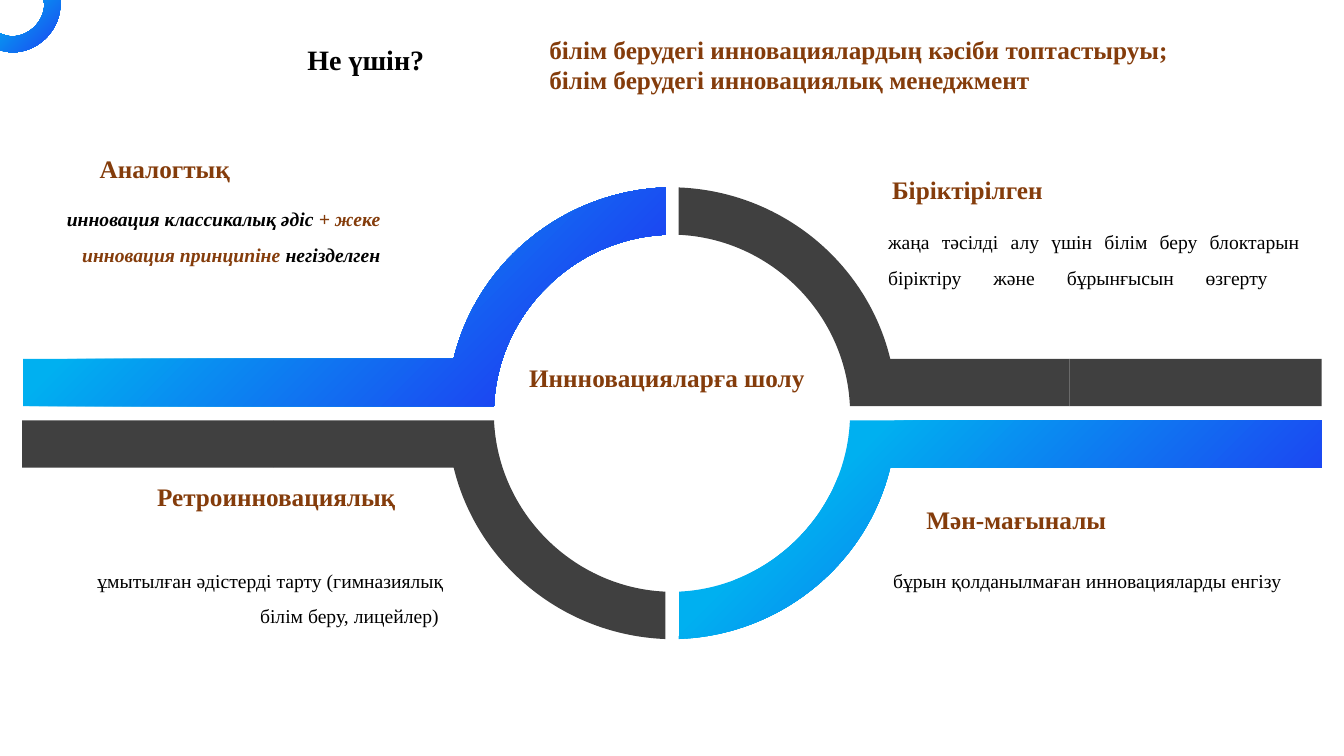
from pptx import Presentation
from pptx.dml.color import RGBColor
from pptx.enum.shapes import MSO_SHAPE as Shape
from pptx.enum.text import MSO_AUTO_SIZE as AutoSize, PP_ALIGN as Align
from pptx.oxml.ns import qn
from pptx.util import Inches, Pt
from lxml import etree

COLORS = {"dark": "404040", "cyan": "00B0F0", "blue": "1C46F2",
          "brown": "843C0B", "black": "000000"}
FONT = "Times New Roman"
CENTER_Y = 4.1
RING_X = {1: 6.73, -1: 6.6}
QUARTER_RING = [(2.1, 0.54), (1.87, 1.49), (1.02, 2.2), (0, 2.24),
                (0, 1.77), (0.91, 1.73), (1.66, 0.99), (1.7, 0.07)]
QUARTER_CURVES = (1, 5)
CORNER_RING = [(0.43, 0), (0.6, 0), (0.6, 0.04),
               (0.6, 0.3), (0.38, 0.52), (0.12, 0.52),
               (0.09, 0.52), (0.05, 0.51), (0, 0.5), (0, 0.33),
               (0.05, 0.35), (0.09, 0.36), (0.12, 0.36),
               (0.29, 0.36), (0.44, 0.21), (0.44, 0.04)]
CORNER_CURVES = (3, 6, 10, 13)
ARM_STOPS = (0.24, 0.81)
TITLE = {"size": Pt(20), "bold": True}
HEADING = {"size": Pt(18), "bold": True}
BODY = {"size": Pt(14)}
EMPHASIS = {"size": Pt(14), "bold": True, "italic": True}


def rgb(color):
    """Return the named colour."""
    return RGBColor.from_string(COLORS[color])


def paint(shape, stops=None):
    """Fill a shape with the dark tone, or with a cyan to blue gradient."""
    shape.shadow.inherit = False
    shape.line.fill.background()
    if stops is None:
        shape.fill.solid()
        shape.fill.fore_color.rgb = rgb("dark")
        return
    shape.fill.gradient()
    shape.fill.gradient_angle = 315
    for stop, position, color in zip(shape.fill.gradient_stops, stops, ("cyan", "blue")):
        stop.position = position
        stop.color.rgb = rgb(color)


def bend(shape, curves):
    """Turn the three segments from each listed point into one Bezier curve."""
    outline = next(shape.element.iter(qn("a:moveTo"))).getparent()
    segments = list(outline)
    for first in curves:
        curve = etree.Element(qn("a:cubicBezTo"))
        segments[first].addprevious(curve)
        for segment in segments[first:first + 3]:
            curve.append(segment[0])
            outline.remove(segment)


def add_outline(slide, points, curves, stops=None):
    """Draw a closed outline in inches with curves at the listed points."""
    corners = [(Inches(x), Inches(y)) for x, y in points]
    builder = slide.shapes.build_freeform(*corners[0])
    builder.add_line_segments(corners[1:], close=True)
    shape = builder.convert_to_shape()
    bend(shape, curves)
    paint(shape, stops)


def add_arm(slide, side, rise, reach, stops=None):
    """Draw a quarter of the ring with its bar, mirrored by side and rise."""
    arm = QUARTER_RING + [(reach, 0.07), (reach, 0.54)]
    points = [(RING_X[side] + side * x, CENTER_Y - rise * y) for x, y in arm]
    add_outline(slide, points, QUARTER_CURVES, stops)


def add_bar_end(slide, left, top, width):
    """Draw the outer piece of a dark bar."""
    paint(slide.shapes.add_shape(Shape.RECTANGLE, Inches(left), Inches(top),
                                 Inches(width), Inches(0.47)))


def add_text(slide, box, paragraphs, style, align=Align.LEFT, spacing=None,
             wrap=True, final_break=False):
    """Write paragraphs, each a list of (text, colour) runs."""
    frame = slide.shapes.add_textbox(*map(Inches, box)).text_frame
    frame.word_wrap = wrap
    frame.auto_size = AutoSize.SHAPE_TO_FIT_TEXT
    for index, runs in enumerate(paragraphs):
        paragraph = frame.add_paragraph() if index else frame.paragraphs[0]
        paragraph.alignment = align
        paragraph.line_spacing = spacing
        for text, color in runs:
            run = paragraph.add_run()
            run.text = text
            run.font.name = FONT
            run.font.color.rgb = rgb(color)
            for attribute, value in style.items():
                setattr(run.font, attribute, value)
        if final_break:
            paragraph.add_line_break()


def main():
    """Build the slide and save it."""
    deck = Presentation()
    deck.slide_width, deck.slide_height = Inches(13.33), Inches(7.5)
    slide = deck.slides.add_slide(deck.slide_layouts[6])

    add_outline(slide, CORNER_RING, CORNER_CURVES, (0.04, 0.95))
    add_arm(slide, 1, 1, 3.88)
    add_bar_end(slide, 10.61, 3.56, 2.5)
    add_arm(slide, 1, -1, 6.38, ARM_STOPS)
    add_arm(slide, -1, 1, 6.37, ARM_STOPS)
    add_arm(slide, -1, -1, 3.89)
    add_bar_end(slide, 0.22, 4.17, 2.49)

    descriptions = [
        ((8.71, 2.12, 4.28, 1.16), "жаңа тәсілді алу үшін білім беру блоктарын "
         "біріктіру және бұрынғысын өзгерту ", Align.JUSTIFY),
        ((8.76, 5.48, 4.1, 0.81), "бұрын қолданылмаған инновацияларды енгізу ",
         Align.JUSTIFY),
        ((0.69, 5.48, 3.81, 1.16), "ұмытылған әдістерді тарту (гимназиялық "
         "білім беру, лицейлер) ", Align.RIGHT),
    ]
    for box, description, align in descriptions:
        add_text(slide, box, [[(description, "black")]], BODY, align, 1.5,
                 final_break=True)

    analog = [("инновация классикалық әдіс ", "black"),
              ("+ жеке инновация принципіне ", "brown"), ("негізделген", "black")]
    add_text(slide, (0.48, 1.89, 3.39, 0.77), [analog], EMPHASIS, Align.RIGHT, 1.5)

    headings = [
        ((8.75, 1.68, 3.14, 0.4), "Біріктірілген", True),
        ((9.09, 4.95, 3.23, 0.4), "Мән-мағыналы", True),
        ((0.89, 1.47, 1.57, 0.4), "Аналогтық", False),
        ((5.15, 3.55, 3.03, 0.4), "Иннновацияларға шолу", False),
    ]
    for box, heading, wrap in headings:
        add_text(slide, box, [[(heading, "brown")]], HEADING, wrap=wrap)
    add_text(slide, (0.54, 4.73, 3.48, 0.71), [[("Ретроинновациялық", "brown")]],
             HEADING, Align.RIGHT, final_break=True)

    topics = ["білім берудегі инновациялардың кәсіби топтастыруы;",
              "білім берудегі инновациялық менеджмент"]
    add_text(slide, (5.35, 0.29, 7.15, 0.71),
             [[(topic, "brown")] for topic in topics], HEADING)
    add_text(slide, (2.95, 0.37, 1.37, 0.44), [[("Не үшін?", "black")]], TITLE, wrap=False)
    deck.save("out.pptx")


if __name__ == "__main__":
    main()
